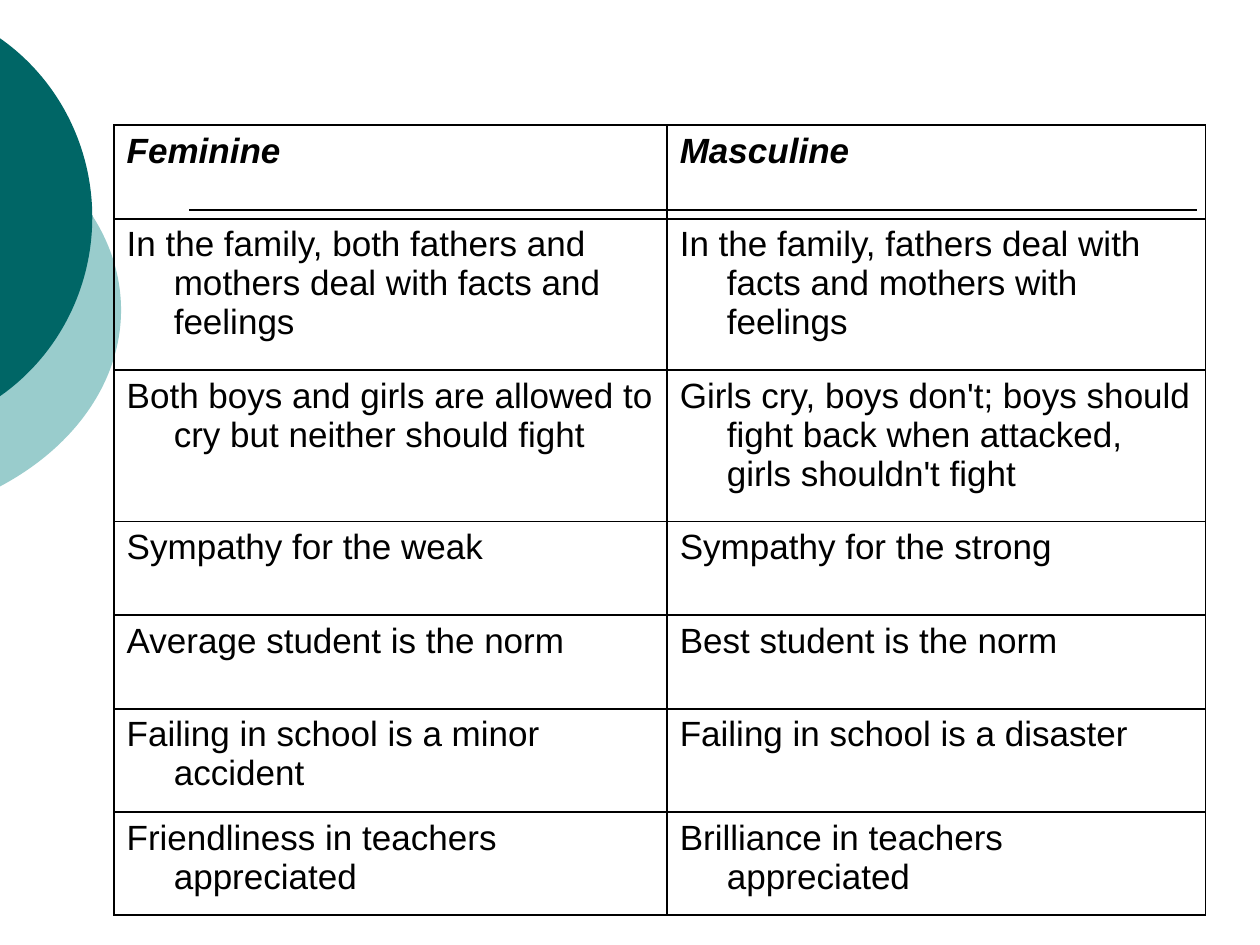
from dataclasses import dataclass

from lxml.etree import SubElement
from pptx import Presentation
from pptx.dml.color import RGBColor
from pptx.enum.shapes import MSO_CONNECTOR, MSO_SHAPE
from pptx.oxml.ns import qn
from pptx.util import Cm, Pt


@dataclass(frozen=True)
class Theme:
    font: str = "Arial"
    text_size: int = 20
    line_width: int = 1
    ink: str = "000000"
    teal: str = "006666"
    pale_teal: str = "99CCCC"


COLUMN_WIDTHS = (11.15, 10.85)
ROW_HEIGHTS = (1.89, 3.05, 3.05, 1.89, 1.89, 2.08, 2.08)
ROWS = (
    ("Feminine", "Masculine"),
    ("In the family, both fathers and mothers deal with facts and feelings",
     "In the family, fathers deal with facts and mothers with feelings"),
    ("Both boys and girls are allowed to cry but neither should fight",
     "Girls cry, boys don't; boys should fight back when attacked, girls shouldn't fight"),
    ("Sympathy for the weak", "Sympathy for the strong"),
    ("Average student is the norm", "Best student is the norm"),
    ("Failing in school is a minor accident", "Failing in school is a disaster"),
    ("Friendliness in teachers appreciated", "Brilliance in teachers appreciated"),
)


class SlideBuilder:
    def __init__(self, slide, theme):
        self.slide = slide
        self.theme = theme

    def add_ellipse(self, left, top, width, height, color):
        shape = self.slide.shapes.add_shape(
            MSO_SHAPE.OVAL, Cm(left), Cm(top), Cm(width), Cm(height))
        shape.shadow.inherit = False
        shape.fill.solid()
        shape.fill.fore_color.rgb = RGBColor.from_string(color)
        shape.line.fill.background()

    def add_rule(self, left, right, top):
        rule = self.slide.shapes.add_connector(
            MSO_CONNECTOR.STRAIGHT, Cm(left), Cm(top), Cm(right), Cm(top))
        rule.line.color.rgb = RGBColor.from_string(self.theme.ink)
        rule.line.width = Pt(self.theme.line_width)
        SubElement(rule._element.spPr, qn("a:effectLst"))

    def add_table(self, left, top, column_widths, row_heights, rows):
        table = self.slide.shapes.add_table(
            len(rows), len(column_widths), Cm(left), Cm(top),
            Cm(sum(column_widths)), Cm(sum(row_heights))).table
        table.first_row = table.horz_banding = False
        for column, width in zip(table.columns, column_widths):
            column.width = Cm(width)
        for row_index, (row, height, texts) in enumerate(zip(table.rows, row_heights, rows)):
            row.height = Cm(height)
            for cell, text in zip(row.cells, texts):
                self.format_cell(cell, text, is_header=row_index == 0)

    def format_cell(self, cell, text, is_header):
        self.add_borders(cell)
        cell.fill.background()
        cell.text_frame.text = text
        paragraph = cell.text_frame.paragraphs[0]
        properties = paragraph._p.get_or_add_pPr()
        properties.set("marL", str(Cm(0.95)))
        properties.set("indent", str(Cm(-0.95)))
        font = paragraph.runs[0].font
        font.name = self.theme.font
        font.size = Pt(self.theme.text_size)
        font.bold = font.italic = is_header
        font.color.rgb = RGBColor.from_string(self.theme.ink)

    def add_borders(self, cell):
        properties = cell._tc.get_or_add_tcPr()
        for side in ("a:lnL", "a:lnR", "a:lnT", "a:lnB"):
            border = SubElement(properties, qn(side), w=str(Pt(self.theme.line_width)))
            fill = SubElement(border, qn("a:solidFill"))
            SubElement(fill, qn("a:srgbClr"), val=self.theme.ink)


def main():
    presentation = Presentation()
    presentation.slide_width, presentation.slide_height = Cm(25.4), Cm(19.05)
    theme = Theme()
    slide = presentation.slides.add_slide(presentation.slide_layouts[6])
    builder = SlideBuilder(slide, theme)
    builder.add_ellipse(-8.99, 1.91, 11.43, 8.68, theme.pale_teal)
    builder.add_ellipse(-6.73, 0, 8.59, 8.76, theme.teal)
    builder.add_rule(3.81, 24.13, 4.24)
    builder.add_table(2.3, 2.52, COLUMN_WIDTHS, ROW_HEIGHTS, ROWS)
    presentation.save("out.pptx")


if __name__ == "__main__":
    main()
